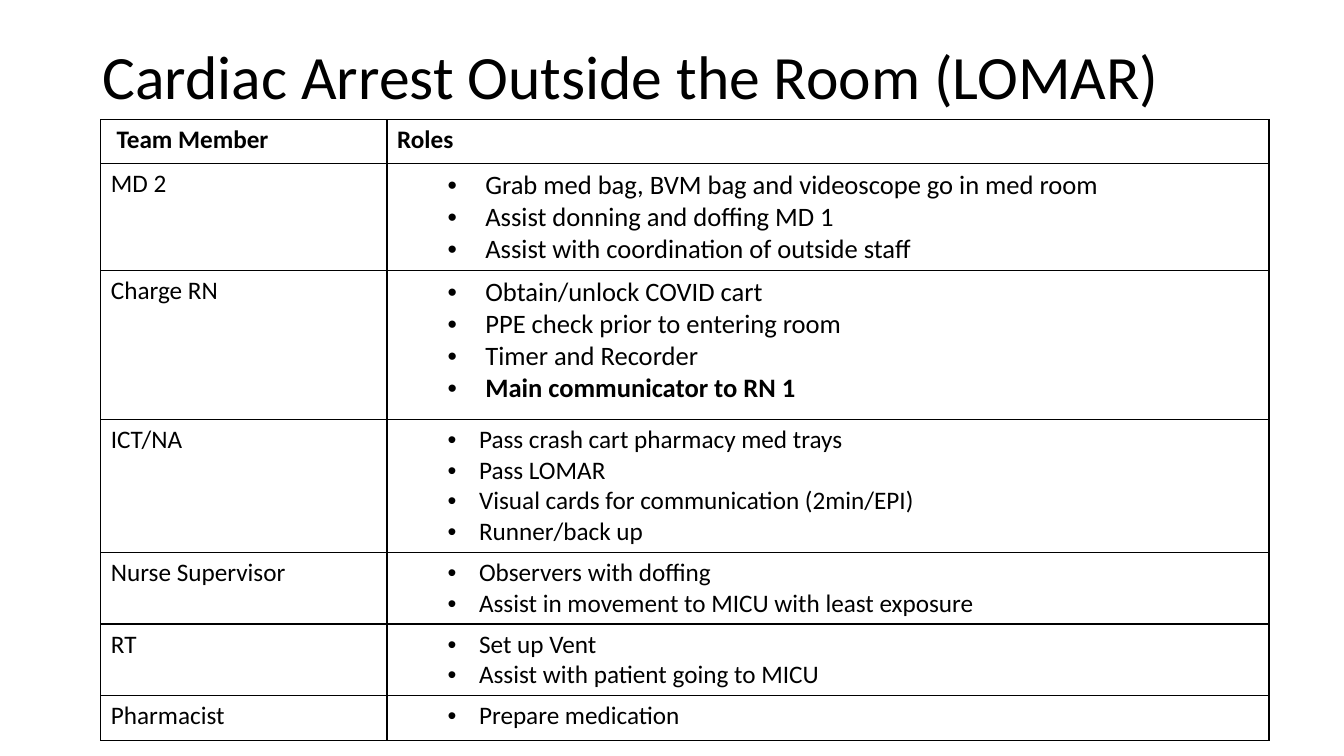
"""Build the slide listing team roles for a cardiac arrest outside the room."""
from lxml import etree
from pptx import Presentation
from pptx.dml.color import RGBColor
from pptx.enum.text import MSO_ANCHOR, PP_ALIGN
from pptx.oxml.ns import qn
from pptx.util import Pt

LEFT = PP_ALIGN.LEFT
MIDDLE = MSO_ANCHOR.MIDDLE

TITLE = "Cardiac Arrest Outside the Room (LOMAR)"
HEADERS = (" Team Member", "Roles")
LARGE = (19, 63, 27)
SMALL = (18, 58.5, 22.5)
TEAM = [
    ("MD 2", 76.5, LARGE, ["Grab med bag, BVM bag and videoscope go in med room",
                           "Assist donning and doffing MD 1",
                           "Assist with coordination of outside staff"]),
    ("Charge RN", 106, LARGE, ["Obtain/unlock COVID cart",
                               "PPE check prior to entering room",
                               "Timer and Recorder",
                               "Main communicator to RN 1"]),
    ("ICT/NA", 95, SMALL, ["Pass crash cart pharmacy med trays",
                           "Pass LOMAR",
                           "Visual cards for communication (2min/EPI)",
                           "Runner/back up"]),
    ("Nurse Supervisor", 51, SMALL, ["Observers with doffing",
                                     "Assist in movement to MICU with least exposure"]),
    ("RT", 51, SMALL, ["Set up Vent", "Assist with patient going to MICU"]),
    ("Pharmacist", 32, SMALL, ["Prepare medication"]),
]
BOLD_ROLES = {"Main communicator to RN 1"}
HEADER_HEIGHT = 31.5
COLUMN_WIDTHS = (204.5, 630)
BLACK = "000000"


def color(value):
    return RGBColor.from_string(value)


def style(paragraph, size, bold=False):
    paragraph.alignment = LEFT
    font = paragraph.font
    font.name, font.size, font.bold = "Calibri", Pt(size), bold
    font.color.rgb = color(BLACK)


def add_bullet(paragraph, margin, hanging):
    properties = paragraph._p.get_or_add_pPr()
    properties.set("marL", str(Pt(margin)))
    properties.set("indent", str(-Pt(hanging)))
    bullet_font = etree.Element(qn("a:buFont"), typeface="Arial")
    bullet = etree.Element(qn("a:buChar"), char="•")
    position = 0
    for element in (bullet_font, bullet):
        properties.insert(position, element)
        position += 1


def add_borders(cell):
    properties = cell._tc.get_or_add_tcPr()
    for position, side in enumerate(("lnL", "lnR", "lnT", "lnB")):
        line = etree.Element(qn(f"a:{side}"), w=str(Pt(1)))
        fill = etree.SubElement(line, qn("a:solidFill"))
        etree.SubElement(fill, qn("a:srgbClr"), val=BLACK)
        properties.insert(position, line)


def fill_cell(cell, lines, size, bold_lines=(), indents=None):
    cell.fill.background()
    add_borders(cell)
    frame = cell.text_frame
    frame.text = "\n".join(lines)
    for paragraph in frame.paragraphs:
        style(paragraph, size, paragraph.text in bold_lines)
        if indents:
            paragraph.level = 1
            add_bullet(paragraph, *indents)


def add_title(slide):
    title = slide.shapes.title
    title.left, title.top, title.width, title.height = Pt(66), Pt(4.5), Pt(853), Pt(104.5)
    frame = title.text_frame
    frame.text = TITLE
    frame.vertical_anchor = MIDDLE
    paragraph = frame.paragraphs[0]
    style(paragraph, 44)
    paragraph.line_spacing = 0.9


def add_team_table(slide):
    heights = [HEADER_HEIGHT] + [height for _, height, _, _ in TEAM]
    table = slide.shapes.add_table(len(heights), len(COLUMN_WIDTHS), Pt(72), Pt(85.5),
                                   Pt(sum(COLUMN_WIDTHS)), Pt(sum(heights))).table
    table.first_row = table.horz_banding = False
    for column, width in zip(table.columns, COLUMN_WIDTHS):
        column.width = Pt(width)
    for row, height in zip(table.rows, heights):
        row.height = Pt(height)
    for index, header in enumerate(HEADERS):
        fill_cell(table.cell(0, index), [header], 18, HEADERS)
    for index, (member, _, (size, *indents), roles) in enumerate(TEAM, start=1):
        fill_cell(table.cell(index, 0), [member], 18)
        fill_cell(table.cell(index, 1), roles, size, BOLD_ROLES, indents)


def main():
    presentation = Presentation()
    presentation.slide_width, presentation.slide_height = Pt(960), Pt(540)
    slide = presentation.slides.add_slide(presentation.slide_layouts[5])
    add_title(slide)
    add_team_table(slide)
    presentation.save("out.pptx")


if __name__ == "__main__":
    main()
